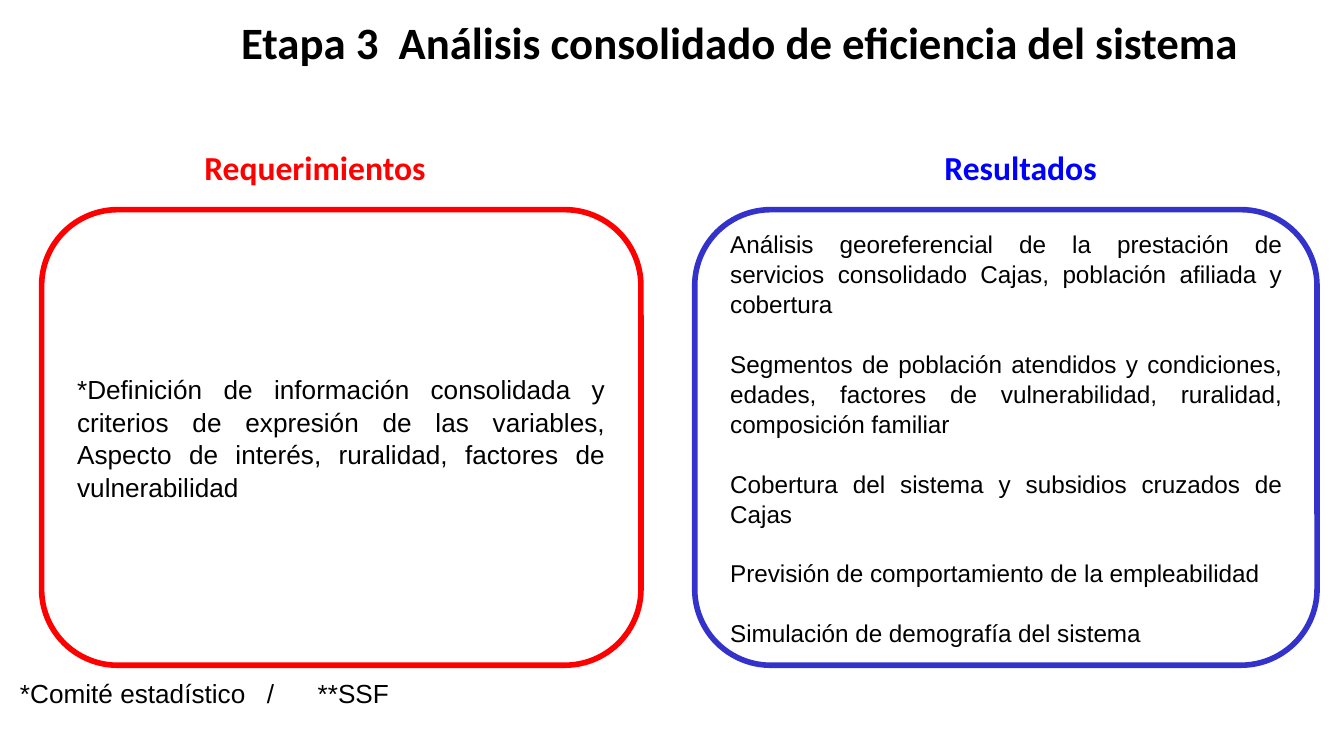
import dataclasses

import lxml.etree
import pptx
import pptx.dml.color
import pptx.enum.shapes
import pptx.enum.text
import pptx.oxml.ns
import pptx.util

Pt = pptx.util.Pt
Align = pptx.enum.text.PP_ALIGN
Anchor = pptx.enum.text.MSO_ANCHOR


@dataclasses.dataclass(frozen=True)
class Theme:
    head: str = "Calibri"
    body: str = "Arial"
    black: str = "000000"
    white: str = "FFFFFF"
    red: str = "FF0000"
    blue: str = "0000FF"
    navy: str = "3333CC"
    title: int = 24
    label: int = 18
    text: int = 14
    small: int = 13


THEME = Theme()

NEEDS = [
    "*Definición de información consolidada y criterios de expresión de las "
    "variables, Aspecto de interés, ruralidad, factores de vulnerabilidad",
]
RESULTS = [
    "Análisis georeferencial de la prestación de servicios consolidado Cajas, "
    "población afiliada y cobertura",
    "Segmentos de población atendidos y condiciones, edades, factores de "
    "vulnerabilidad, ruralidad, composición familiar",
    "Cobertura del sistema y subsidios cruzados de Cajas",
    "Previsión de comportamiento de la empleabilidad",
    "Simulación de demografía del sistema",
]


def color(code):
    return pptx.dml.color.RGBColor.from_string(code)


def apply(item, values):
    for name, value in values.items():
        setattr(item, name, value)


def add_tabs(para, stops):
    props = para._p.get_or_add_pPr()
    tabs = lxml.etree.SubElement(props, pptx.oxml.ns.qn("a:tabLst"))
    for stop in stops:
        tab = lxml.etree.SubElement(tabs, pptx.oxml.ns.qn("a:tab"))
        tab.set("pos", str(Pt(stop)))
        tab.set("algn", "l")


def fill_text(shape, lines, font, tint, form, inset=7.2,
              anchor=Anchor.TOP, gap=0, stops=()):
    frame = shape.text_frame
    sides = ("left", "top", "right", "bottom")
    apply(frame, {f"margin_{side}": Pt(inset) for side in sides})
    apply(frame, {"word_wrap": True, "vertical_anchor": anchor})
    for index, line in enumerate(lines):
        para = frame.add_paragraph() if index else frame.paragraphs[0]
        para.text = line
        apply(para, form)
        if index:
            para.space_before = Pt(gap)
        if stops:
            add_tabs(para, stops)
        for run in para.runs:
            apply(run.font, font)
            run.font.color.rgb = color(tint)


def add_note(slide, area, *args, **extra):
    box = slide.shapes.add_textbox(*map(Pt, area))
    fill_text(box, *args, **extra)


def add_panel(slide, area, edge, lines, size):
    kind = pptx.enum.shapes.MSO_SHAPE.ROUNDED_RECTANGLE
    panel = slide.shapes.add_shape(kind, *map(Pt, area))
    panel.adjustments[0] = 0.167
    panel.shadow.inherit = False
    panel.fill.solid()
    panel.fill.fore_color.rgb = color(THEME.white)
    panel.line.color.rgb = color(edge)
    panel.line.width = Pt(3)
    fill_text(panel, lines, {"name": THEME.body, "size": Pt(size)},
              THEME.black, {"alignment": Align.JUSTIFY, "line_spacing": 1.04},
              anchor=Anchor.MIDDLE, gap=size * 1.2)


def main():
    deck = pptx.Presentation()
    apply(deck, {"slide_width": Pt(720), "slide_height": Pt(405)})
    slide = deck.slides.add_slide(deck.slide_layouts[6])
    form = {"alignment": Align.CENTER, "line_spacing": 1.15}
    bold = {"name": THEME.head, "bold": True}

    # Title
    add_note(slide, (109.4, 3.6, 573.8, 67.7),
             ["Etapa 3  Análisis consolidado de eficiencia del sistema"],
             {**bold, "size": Pt(THEME.title)}, THEME.black, form, inset=0)

    # Panels
    add_panel(slide, (22.3, 112.3, 321.1, 244.1), THEME.red, NEEDS, THEME.text)
    add_panel(slide, (372.2, 112.3, 333.4, 244.1), THEME.navy, RESULTS,
              THEME.small)

    # Panel labels
    labels = [(22.3, "Requerimientos", THEME.red),
              (400.3, "Resultados", THEME.blue)]
    for left, label, tint in labels:
        add_note(slide, (left, 68.4, 293, 56.9), [label],
                 {**bold, "size": Pt(THEME.label)}, tint, form)

    # Footnote
    add_note(slide, (3.6, 355.7, 219.6, 31.7),
             ["*Comité estadístico\t/\t**SSF"],
             {"name": THEME.body, "size": Pt(THEME.text)}, THEME.black,
             {"alignment": Align.LEFT}, stops=(132.3, 159.5))

    deck.save("out.pptx")


if __name__ == "__main__":
    main()
